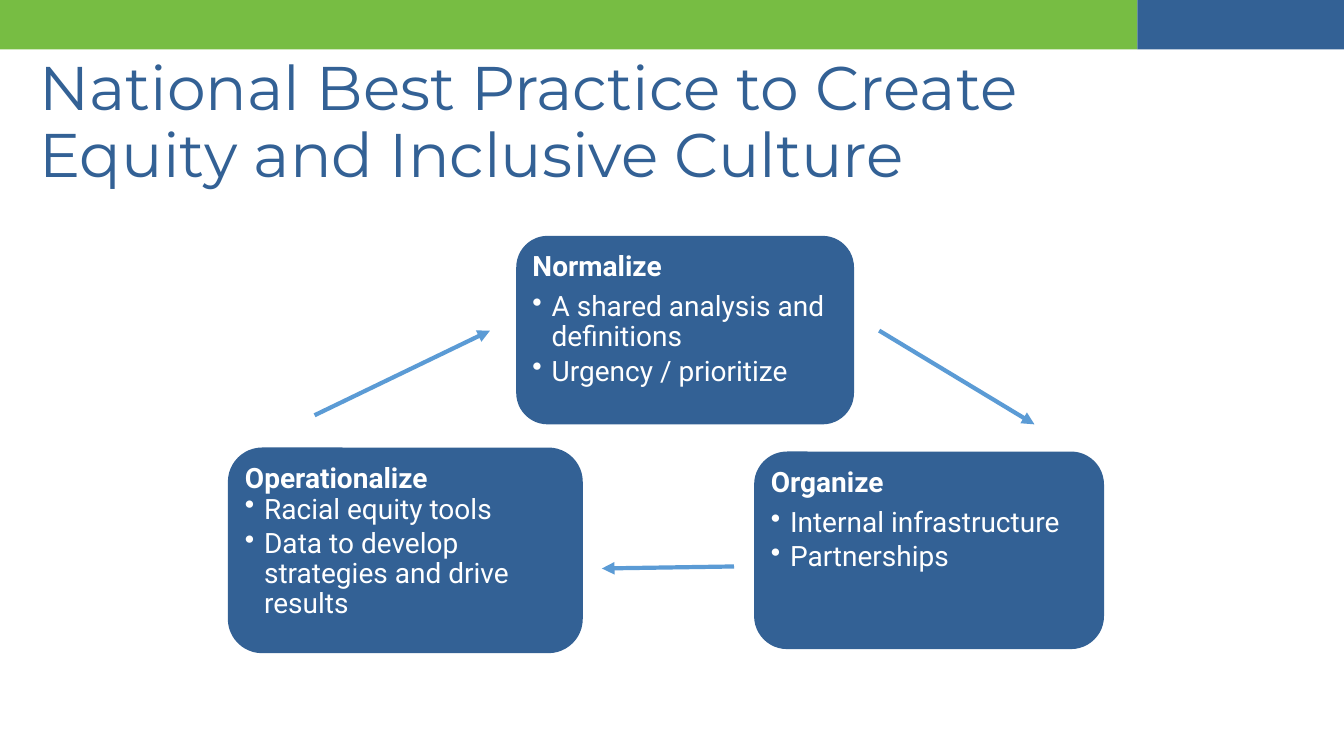
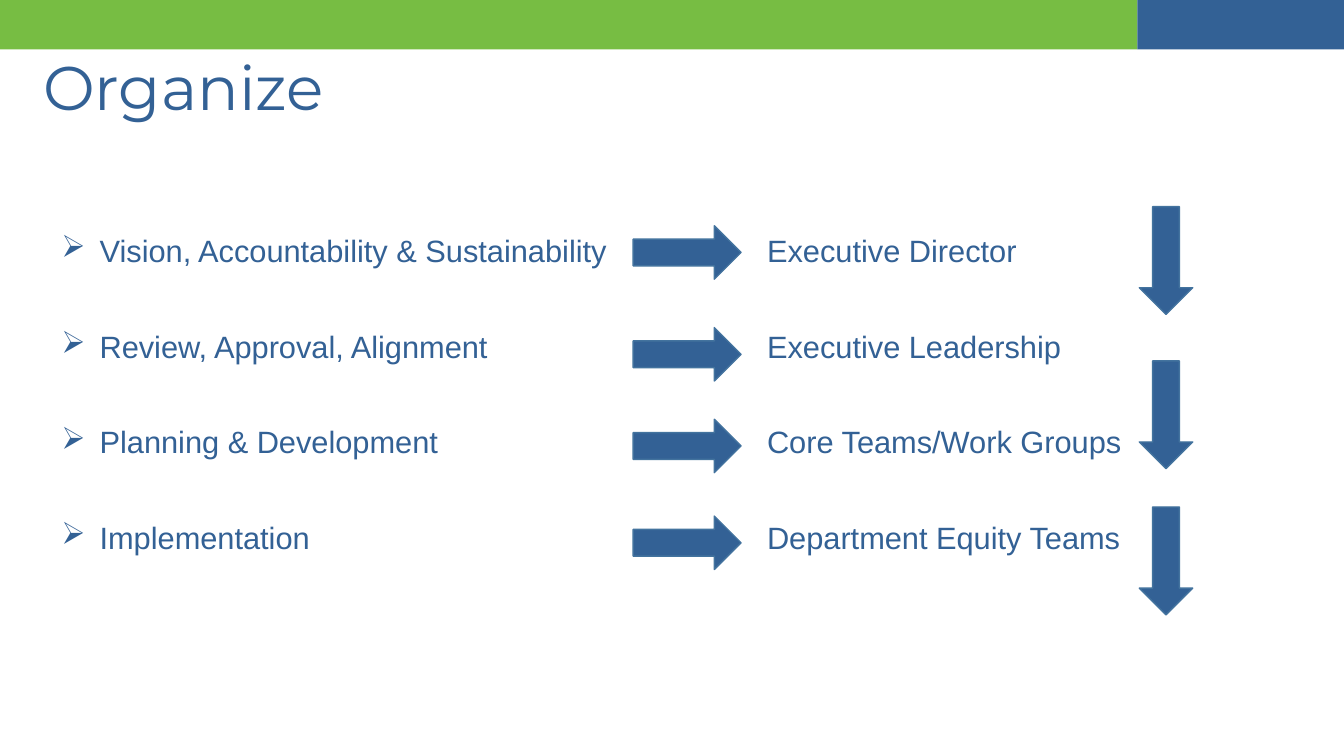
from dataclasses import dataclass

from lxml.etree import SubElement
from pptx import Presentation
from pptx.dml.color import RGBColor
from pptx.enum.shapes import MSO_CONNECTOR as CONN, MSO_SHAPE as SHAPE
from pptx.enum.text import MSO_ANCHOR as ANCHOR, PP_ALIGN as ALIGN
from pptx.oxml.ns import qn
from pptx.util import Pt

PX = 9144  # EMU per px, 100 px to the inch


@dataclass(frozen=True)
class Theme:
    green: str = "77BD43"
    blue: str = "336195"
    white: str = "FFFFFF"
    connector: str = "5B9BD5"
    outline: str = "43739E"
    title_font: str = "Montserrat"
    card_font: str = "Roboto"
    body_font: str = "Arial"
    title_size: int = 44
    card_size: int = 20
    body_size: int = 22
    line_spacing: float = 0.9


def rgb(value):
    return RGBColor.from_string(value)


def emu(*lengths):
    return [n * PX for n in lengths]


class Deck:
    def __init__(self, theme, width, height):
        self.theme = theme
        self.prs = Presentation()
        self.prs.slide_width, self.prs.slide_height = emu(width, height)
        self.slide = None

    def new_slide(self, title, left):
        """Start a slide with the top band and its title."""
        t = self.theme
        self.slide = self.prs.slides.add_slide(self.prs.slide_layouts[6])
        self.shape(SHAPE.RECTANGLE, (0, 0, 1128, 49), t.green)
        self.shape(SHAPE.RECTANGLE, (1128, 0, 205, 49), t.blue)
        tf = self.text_box((left, 52, 1191, 144))
        self.paragraph(tf, title, t.title_font, t.title_size, t.blue)

    def shape(self, kind, box, fill, outline=None):
        sp = self.slide.shapes.add_shape(kind, *emu(*box))
        sp.shadow.inherit = False
        sp.fill.solid()
        sp.fill.fore_color.rgb = rgb(fill)
        if outline:
            sp.line.color.rgb = rgb(outline)
            sp.line.width = Pt(1)
        else:
            sp.line.fill.background()
        return sp

    def text_box(self, box):
        tf = self.slide.shapes.add_textbox(*emu(*box)).text_frame
        tf.word_wrap = True
        return tf

    def paragraph(self, tf, text, font, size, color, bold=False,
                  bullet=None, indent=0, tab=None, before=0, after=0):
        """Fill the empty first paragraph, or append one after it."""
        first = tf.paragraphs[0]
        p = tf.add_paragraph() if first.runs else first
        p.alignment = ALIGN.LEFT
        p.line_spacing = self.theme.line_spacing
        p.space_before = Pt(0 if p is first else before)
        p.space_after = Pt(after)
        ppr = p._p.get_or_add_pPr()
        if bullet:
            ppr.set("marL", str(indent * PX))
            ppr.set("indent", str(-indent * PX))
            SubElement(ppr, qn("a:buChar"), char=bullet)
        if tab:
            tabs = SubElement(ppr, qn("a:tabLst"))
            SubElement(tabs, qn("a:tab"), pos=str(tab * PX), algn="l")
        r = p.add_run()
        r.text = text
        r.font.name, r.font.size, r.font.bold = font, Pt(size), bold
        r.font.color.rgb = rgb(color)

    def card(self, box, heading, points, heading_gap=7):
        t = self.theme
        tf = self.shape(SHAPE.ROUNDED_RECTANGLE, box, t.blue).text_frame
        tf.word_wrap = True
        tf.vertical_anchor = ANCHOR.TOP
        tf.margin_left = tf.margin_top = tf.margin_right = tf.margin_bottom = 7 * PX
        style = (t.card_font, t.card_size, t.white)
        self.paragraph(tf, heading, *style, bold=True, after=heading_gap)
        for point in points:
            self.paragraph(tf, point, *style, bullet="•", indent=19, after=3)

    def arrow(self, start, end):
        line = self.slide.shapes.add_connector(CONN.STRAIGHT, *emu(*start, *end))
        line.line.color.rgb = rgb(self.theme.connector)
        line.line.width = Pt(3)
        SubElement(line.line._get_or_add_ln(), qn("a:tailEnd"), type="triangle")
        SubElement(line._element.spPr, qn("a:effectLst"))

    def block_arrow(self, kind, box):
        self.shape(kind, box, self.theme.blue, self.theme.outline)

    def tabbed_list(self, box, rows, tab, gap):
        t = self.theme
        tf = self.text_box(box)
        for cells in rows:
            self.paragraph(tf, "\t".join(cells), t.body_font, t.body_size, t.blue,
                           bullet="➢", indent=38, tab=tab, before=gap)


def build_cycle(deck):
    deck.new_slide("National Best Practice to Create Equity and Inclusive Culture", 29)
    deck.card((512, 234, 335, 187), "Normalize",
              ["A shared analysis and definitions", "Urgency / prioritize"])
    deck.card((748, 448, 347, 196), "Organize",
              ["Internal infrastructure", "Partnerships"])
    deck.card((226, 444, 352, 204), "Operationalize",
              ["Racial equity tools", "Data to develop strategies and drive results"],
              heading_gap=0)
    for start, end in [((312, 412), (486, 328)),
                       ((872, 328), (1026, 421)),
                       ((728, 562), (597, 564))]:
        deck.arrow(start, end)


def build_roles(deck):
    deck.new_slide("Organize", 33)
    deck.tabbed_list((51, 229, 1154, 424), [
        ("Vision, Accountability & Sustainability", "Executive Director"),
        ("Review, Approval, Alignment", "Executive Leadership"),
        ("Planning & Development", "Core Teams/Work Groups"),
        ("Implementation", "Department Equity Teams"),
    ], tab=700, gap=44.6)
    for top in (224, 325, 416, 512):
        deck.block_arrow(SHAPE.RIGHT_ARROW, (628, top, 107, 53))
    for top in (205, 358, 503):
        deck.block_arrow(SHAPE.DOWN_ARROW, (1130, top, 53, 107))


def main():
    deck = Deck(Theme(), 1333, 750)
    build_cycle(deck)
    build_roles(deck)
    deck.prs.save("out.pptx")


if __name__ == "__main__":
    main()
